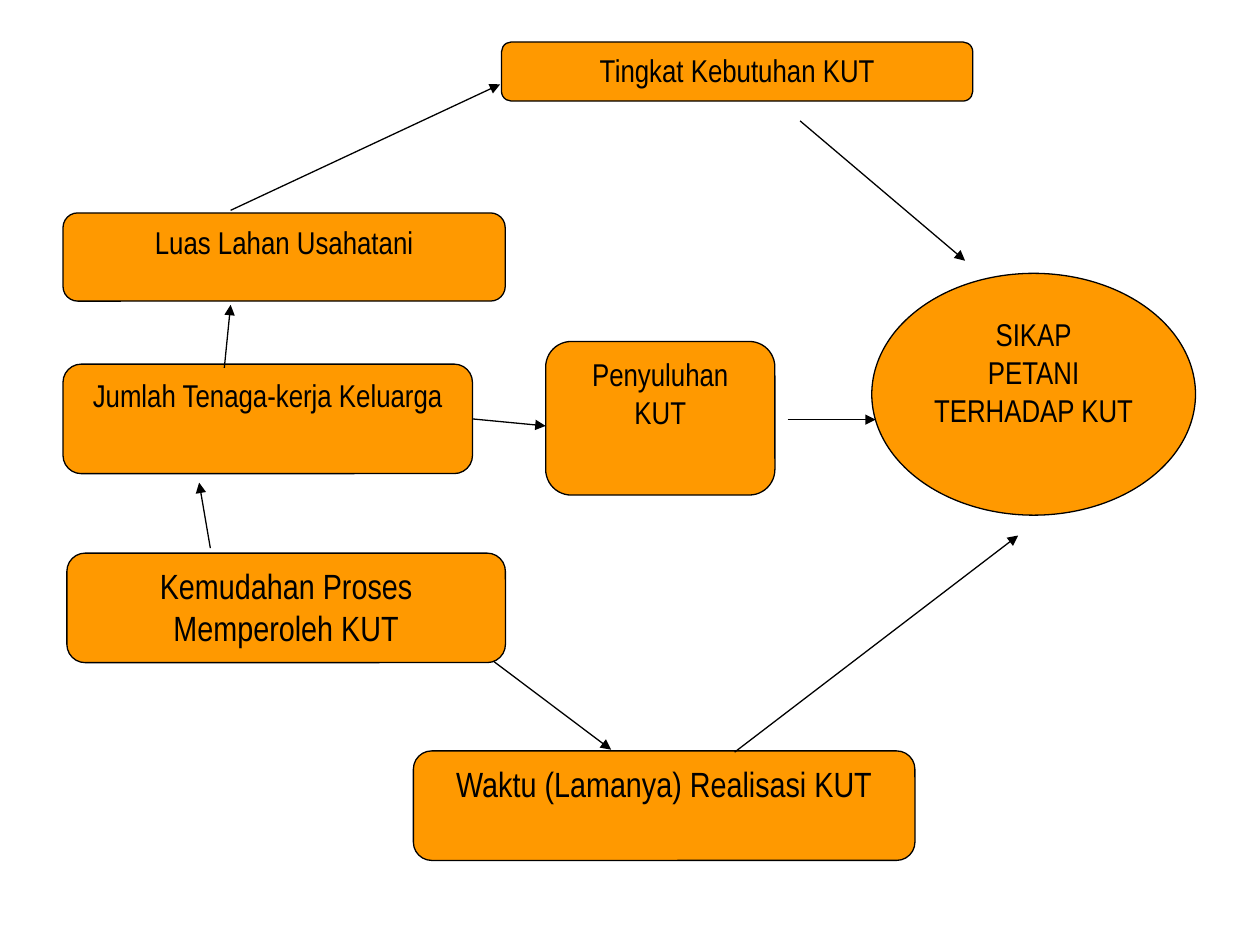
from lxml.etree import SubElement
from pptx import Presentation
from pptx.dml.color import RGBColor
from pptx.enum.shapes import MSO_CONNECTOR, MSO_SHAPE
from pptx.enum.text import MSO_ANCHOR, PP_ALIGN
from pptx.oxml.ns import qn
from pptx.util import Pt

ORANGE = RGBColor(0xFF, 0x99, 0x00)
BLACK = RGBColor(0x00, 0x00, 0x00)
RIGHT_SIDE = 3

FACTORS = {
    "luas": ("Luas Lahan Usahatani", 18, 0, (0, 97.7, 252.7, 50.4)),
    "tenaga": ("Jumlah Tenaga-kerja Keluarga", 18, 6, (0, 184.1, 234, 62.6)),
    "kemudahan": ("Kemudahan Proses Memperoleh KUT", 20, 0, (2.2, 292.1, 250.6, 62.6)),
    "waktu": ("Waktu (Lamanya) Realisasi KUT", 20, 6, (200.2, 405.1, 286.6, 62.6)),
    "kebutuhan": ("Tingkat Kebutuhan KUT", 18, 6, (250.6, 0, 269.3, 33.8)),
    "penyuluhan": ("Penyuluhan KUT", 18, 6, (275.8, 171.1, 131, 87.8)),
}
ATTITUDE = ("SIKAP\nPETANI\nTERHADAP KUT", 18, 0, (462.2, 132.2, 185, 138.2))
INFLUENCES = [
    ((95.8, 96.2), (249.8, 24.2)),
    ((383.8, 405.8), (545.8, 282)),
    ((246.2, 354), (313.2, 404.4)),
    ((84.2, 289.2), (77.8, 251.8)),
    ((421.2, 45.1), (515.5, 125)),
    ((414, 215.8), (464.4, 215.8)),
    ((92.2, 186.2), (95.8, 150.2)),
]
TENAGA_TO_PENYULUHAN = ((234, 215.4), (275.8, 219.4))


def write_text(frame, text, size=18, space_after=0, color=BLACK, font="Arial Narrow"):
    """Fill a text frame with centred, top-anchored paragraphs."""
    frame.word_wrap = True
    frame.vertical_anchor = MSO_ANCHOR.TOP
    for index, line in enumerate(text.split("\n")):
        paragraph = frame.paragraphs[0] if index == 0 else frame.add_paragraph()
        paragraph.alignment = PP_ALIGN.CENTER
        paragraph.space_after = Pt(space_after)
        run = paragraph.add_run()
        run.text = line
        run.font.name = font
        run.font.size = Pt(size)
        run.font.color.rgb = color


def add_node(slide, kind, node, left, top):
    """Draw one labelled node, offset from the diagram's corner."""
    label, size, space_after, (x, y, width, height) = node
    shape = slide.shapes.add_shape(kind, Pt(left + x), Pt(top + y), Pt(width), Pt(height))
    shape.shadow.inherit = False
    shape.fill.solid()
    shape.fill.fore_color.rgb = ORANGE
    shape.line.color.rgb = BLACK
    shape.line.width = Pt(0.75)
    write_text(shape.text_frame, label, size=size, space_after=space_after)
    return shape


def add_arrow(slide, start, end, left, top):
    """Draw one arrow, offset from the diagram's corner."""
    arrow = slide.shapes.add_connector(
        MSO_CONNECTOR.STRAIGHT,
        Pt(left + start[0]), Pt(top + start[1]), Pt(left + end[0]), Pt(top + end[1]),
    )
    arrow.line.color.rgb = BLACK
    arrow.line.width = Pt(0.75)
    SubElement(arrow.line._get_or_add_ln(), qn("a:tailEnd"), type="triangle")
    SubElement(arrow._element.spPr, qn("a:effectLst"))
    return arrow


def draw_diagram(slide, left, top):
    """Draw the factors, the attitude they shape and the arrows between them."""
    factors = {
        name: add_node(slide, MSO_SHAPE.ROUNDED_RECTANGLE, factor, left, top)
        for name, factor in FACTORS.items()
    }
    add_node(slide, MSO_SHAPE.OVAL, ATTITUDE, left, top)
    for start, end in INFLUENCES:
        add_arrow(slide, start, end, left, top)
    extension = add_arrow(slide, *TENAGA_TO_PENYULUHAN, left, top)
    extension.begin_connect(factors["tenaga"], RIGHT_SIDE)


def main():
    """Build and save the slide."""
    presentation = Presentation()
    presentation.slide_width = Pt(720)
    presentation.slide_height = Pt(540)
    slide = presentation.slides.add_slide(presentation.slide_layouts[6])
    draw_diagram(slide, left=36, top=24)
    presentation.save("out.pptx")


if __name__ == "__main__":
    main()
